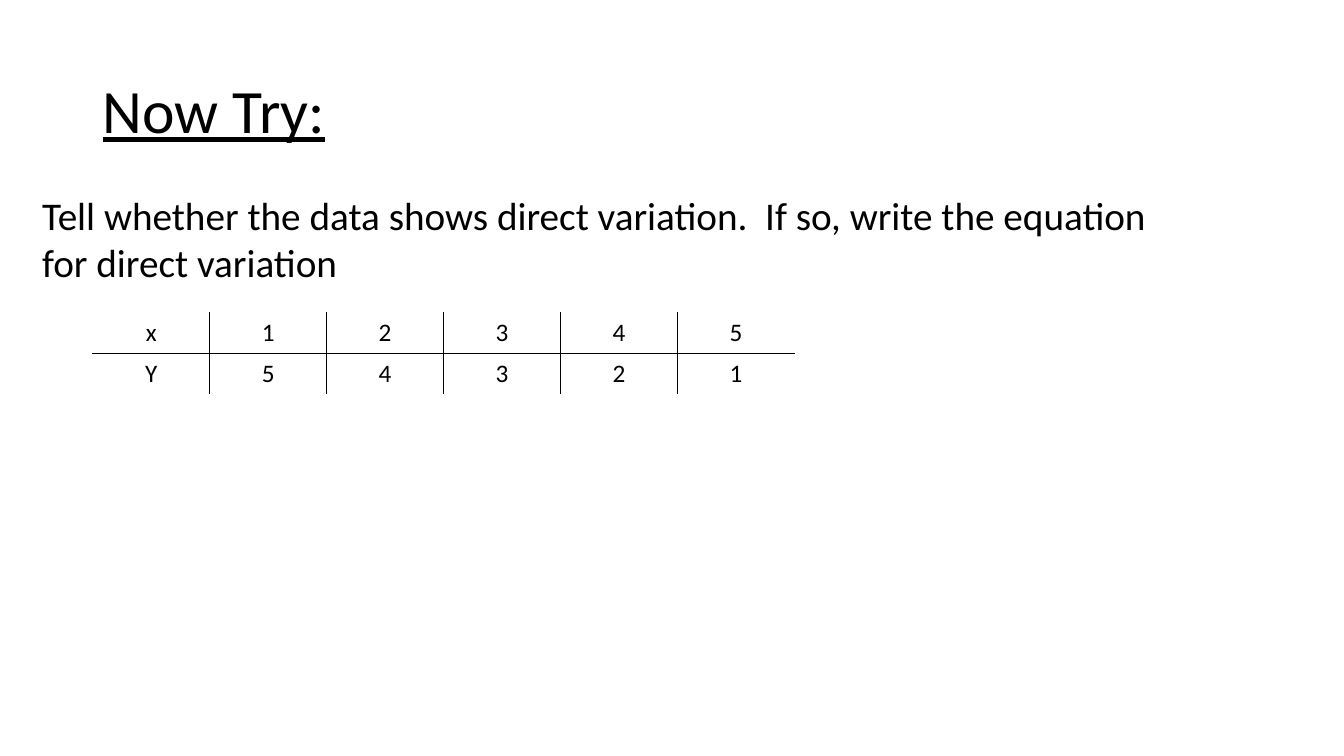
from lxml import etree
from pptx import Presentation
from pptx import util as u
from pptx.dml.color import RGBColor
from pptx.enum import text
from pptx.oxml import ns

PX = 9144  # EMU per px, 100 px to the inch
FONT = "Calibri"
COLORS = {"ink": "000000", "paper": "FFFFFF"}


def add_run(paragraph, words, size):
    run = paragraph.add_run()
    run.text = words
    run.font.name = FONT
    run.font.size = u.Pt(size)
    run.font.color.rgb = RGBColor.from_string(COLORS["ink"])
    return run


def add_border(cell, side, color):
    line = etree.SubElement(cell._tc.get_or_add_tcPr(), ns.qn("a:ln" + side), w=str(u.Pt(1)))
    fill = etree.SubElement(line, ns.qn("a:solidFill"))
    etree.SubElement(fill, ns.qn("a:srgbClr"), val=color)


deck = Presentation()
deck.slide_width, deck.slide_height = 1333 * PX, 750 * PX
slide = deck.slides.add_slide(deck.slide_layouts[5])

# Title
title = slide.shapes.title
title.left, title.top, title.width, title.height = (n * PX for n in (92, 40, 1150, 145))
title.text_frame.auto_size = text.MSO_AUTO_SIZE.NONE
title.text_frame.vertical_anchor = text.MSO_ANCHOR.MIDDLE
heading = title.text_frame.paragraphs[0]
heading.alignment = text.PP_ALIGN.LEFT
heading.line_spacing = 0.9
add_run(heading, "Now Try:", 44).font.underline = True

# Data table, ruled only between its cells
data = [["x", "1", "2", "3", "4", "5"], ["Y", "5", "4", "3", "2", "1"]]
last_row, last_col = len(data) - 1, len(data[0]) - 1
table = slide.shapes.add_table(
    len(data), len(data[0]), 92 * PX, 310 * PX, 696 * PX, 81 * PX).table
table.first_row = table.horz_banding = False
for r, values in enumerate(data):
    for c, value in enumerate(values):
        cell = table.cell(r, c)
        outer = {"L": c == 0, "R": c == last_col, "T": r == 0, "B": r == last_row}
        for side, is_outer in outer.items():
            add_border(cell, side, COLORS["paper" if is_outer else "ink"])
        cell.fill.solid()
        cell.fill.fore_color.rgb = RGBColor.from_string(COLORS["paper"])
        entry = cell.text_frame.paragraphs[0]
        entry.alignment = text.PP_ALIGN.CENTER
        add_run(entry, value, 18)

# Task
task = slide.shapes.add_textbox(32 * PX, 185 * PX, 1136 * PX, 104 * PX).text_frame
task.word_wrap = False
task.auto_size = text.MSO_AUTO_SIZE.SHAPE_TO_FIT_TEXT
add_run(task.paragraphs[0],
        "Tell whether the data shows direct variation.  If so, write the equation", 28)
add_run(task.add_paragraph(), "for direct variation", 28)

deck.save("out.pptx")
